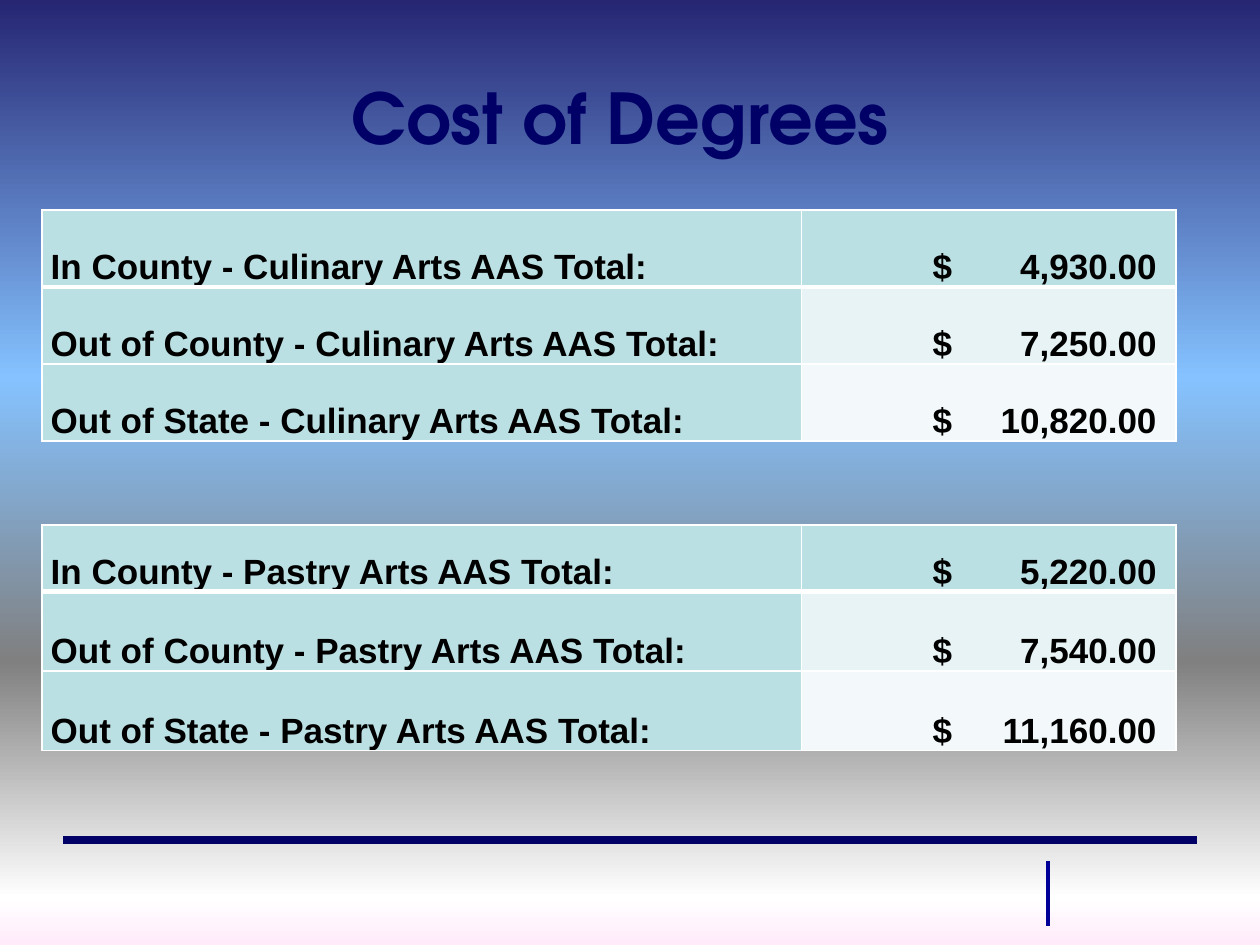
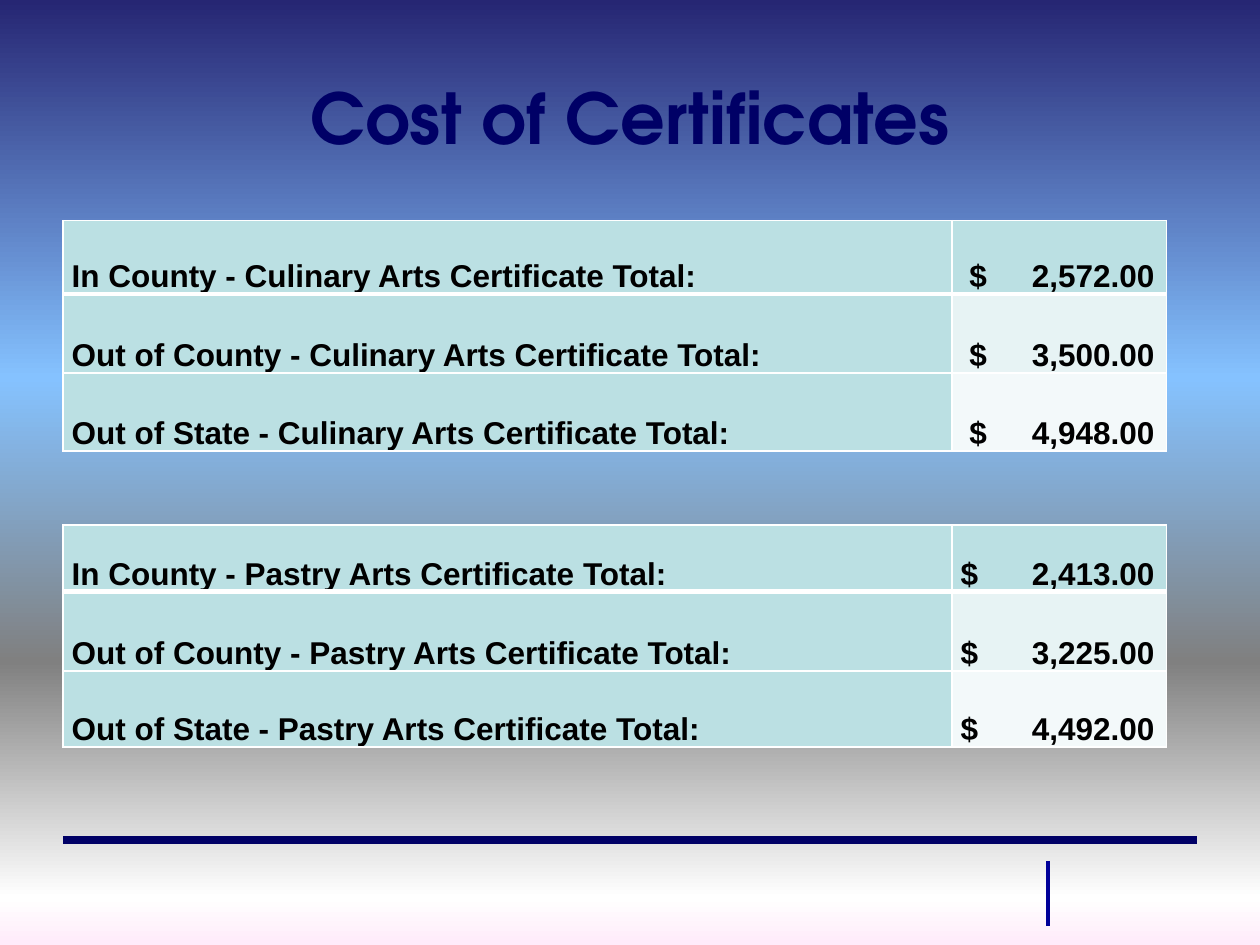
from lxml.etree import SubElement
from pptx import Presentation
from pptx.dml.color import RGBColor
from pptx.enum.shapes import MSO_CONNECTOR as Connector
from pptx.enum.text import MSO_ANCHOR as Anchor, MSO_AUTO_SIZE as AutoSize, PP_ALIGN as Align
from pptx.oxml import parse_xml
from pptx.oxml.ns import nsdecls, qn
from pptx.util import Pt

NAVY, BLUE, WHITE, BLACK = "000066", "000099", "FFFFFF", "000000"
LABEL_FILL = "BBE0E3"
AMOUNT_FILLS = [LABEL_FILL, "E7F3F4", "F3F9FA"]
SKY = [(0, "262673"), (40, "85C2FF"), (70, "808080"), (95, WHITE), (100, "FFEBFA")]
RESIDENCIES = ["In County", "Out of County", "Out of State"]


def rgb(value):
    """Turn a hex string into a colour."""
    return RGBColor.from_string(value)


class CostDeck:
    """Hold the deck style and the current slide."""

    title_font, body_font = "TeX Gyre Adventor", "Arial"

    def __init__(self):
        """Start a deck with the shared gradient background."""
        self.deck = Presentation()
        self.deck.slide_width, self.deck.slide_height = Pt(720), Pt(540)
        self.page = None
        fill = self.deck.slide_master.background.fill
        fill.gradient()
        fill.gradient_angle = 270
        stops = fill.gradient_stops
        stop_list = stops[0]._gs.getparent()
        stop_list.clear()
        for position, colour in SKY:
            stop = SubElement(stop_list, qn("a:gs"), pos=str(position * 1000))
            SubElement(stop, qn("a:srgbClr"), val=colour)

    def style(self, para, name, size, colour):
        """Format every run of a paragraph in bold."""
        for run in para.runs:
            run.font.name, run.font.size, run.font.bold = name, Pt(size), True
            run.font.color.rgb = rgb(colour)

    def add_page(self, title):
        """Add a slide with its title and footer lines."""
        self.page = self.deck.slides.add_slide(self.deck.slide_layouts[5])
        self.line(36, 480, 684, 480, NAVY, 4.5)
        self.line(599, 492, 599, 529, BLUE, 2.25)
        box = self.page.shapes.title
        box.left, box.top, box.width, box.height = Pt(36), Pt(21.6), Pt(648), Pt(90)
        frame = box.text_frame
        frame.text = title
        frame.auto_size, frame.vertical_anchor = AutoSize.NONE, Anchor.MIDDLE
        para = frame.paragraphs[0]
        para.alignment = Align.CENTER
        self.style(para, self.title_font, 40, NAVY)

    def line(self, x1, y1, x2, y2, colour, width):
        """Draw a straight line without a shadow."""
        line = self.page.shapes.add_connector(
            Connector.STRAIGHT, Pt(x1), Pt(y1), Pt(x2), Pt(y2))
        line.line.color.rgb, line.line.width = rgb(colour), Pt(width)
        SubElement(line._element.spPr, qn("a:effectLst"))

    def borders(self, cell, top, bottom):
        """Give a cell white borders of the given widths."""
        properties = cell._tc.get_or_add_tcPr()
        for index, (side, width) in enumerate(
                [("L", 1), ("R", 1), ("T", top), ("B", bottom)]):
            properties.insert(index, parse_xml(
                f'<a:ln{side} {nsdecls("a")} w="{Pt(width)}"><a:solidFill>'
                f'<a:srgbClr val="{WHITE}"/></a:solidFill></a:ln{side}>'))

    def cell(self, cell, text, size, fill, row, indent=5, tab_end=None):
        """Fill one cell, with an optional right tab measured from its edge."""
        cell.fill.solid()
        cell.fill.fore_color.rgb = rgb(fill)
        self.borders(cell, 3 if row == 1 else 1, 3 if row == 0 else 1)
        cell.margin_left, cell.margin_right = Pt(indent), Pt(5)
        cell.margin_top = cell.margin_bottom = 0
        cell.vertical_anchor = Anchor.BOTTOM
        para = cell.text_frame.paragraphs[0]
        para.text, para.line_spacing = text, 1.5
        if tab_end:
            tabs = SubElement(para._p.get_or_add_pPr(), qn("a:tabLst"))
            SubElement(tabs, qn("a:tab"), pos=str(Pt(tab_end - indent)), algn="r")
        self.style(para, self.body_font, size, BLACK)

    def cost_table(self, left, top, widths, heights, program, amounts, size, indent, tab_end):
        """Add a table of program totals by residency."""
        table = self.page.shapes.add_table(
            len(amounts), 2, Pt(left), Pt(top), Pt(sum(widths)), Pt(sum(heights))).table
        table.horz_banding = False
        for column, width in zip(table.columns, widths):
            column.width = Pt(width)
        for row, (residency, amount) in enumerate(zip(RESIDENCIES, amounts)):
            table.rows[row].height = Pt(heights[row])
            self.cell(table.cell(row, 0), f"{residency} - {program} Total:", size,
                      LABEL_FILL, row)
            self.cell(table.cell(row, 1), f"$\t{amount}", size,
                      AMOUNT_FILLS[row], row, indent, tab_end)


def main():
    """Build both cost slides."""
    costs = CostDeck()

    costs.add_page("Cost of Degrees ")
    degree = dict(left=24, widths=[434, 214], size=20, indent=75, tab_end=203)
    costs.cost_table(top=120, heights=[44, 44, 44], program="Culinary Arts AAS",
                     amounts=["4,930.00", "7,250.00", "10,820.00"], **degree)
    costs.cost_table(top=300, heights=[38.2, 45.3, 45.3], program="Pastry Arts AAS",
                     amounts=["5,220.00", "7,540.00", "11,160.00"], **degree)

    costs.add_page("Cost of Certificates")
    certificate = dict(left=36, widths=[508, 122.5], size=18, tab_end=115.7)
    costs.cost_table(top=126, heights=[42, 45.3, 44.5], indent=10,
                     program="Culinary Arts Certificate",
                     amounts=["2,572.00", "3,500.00", "4,948.00"], **certificate)
    costs.cost_table(top=300, heights=[38.2, 45.3, 43.3], indent=5,
                     program="Pastry Arts Certificate",
                     amounts=["2,413.00", "3,225.00", "4,492.00"], **certificate)

    costs.deck.save("out.pptx")


if __name__ == "__main__":
    main()
